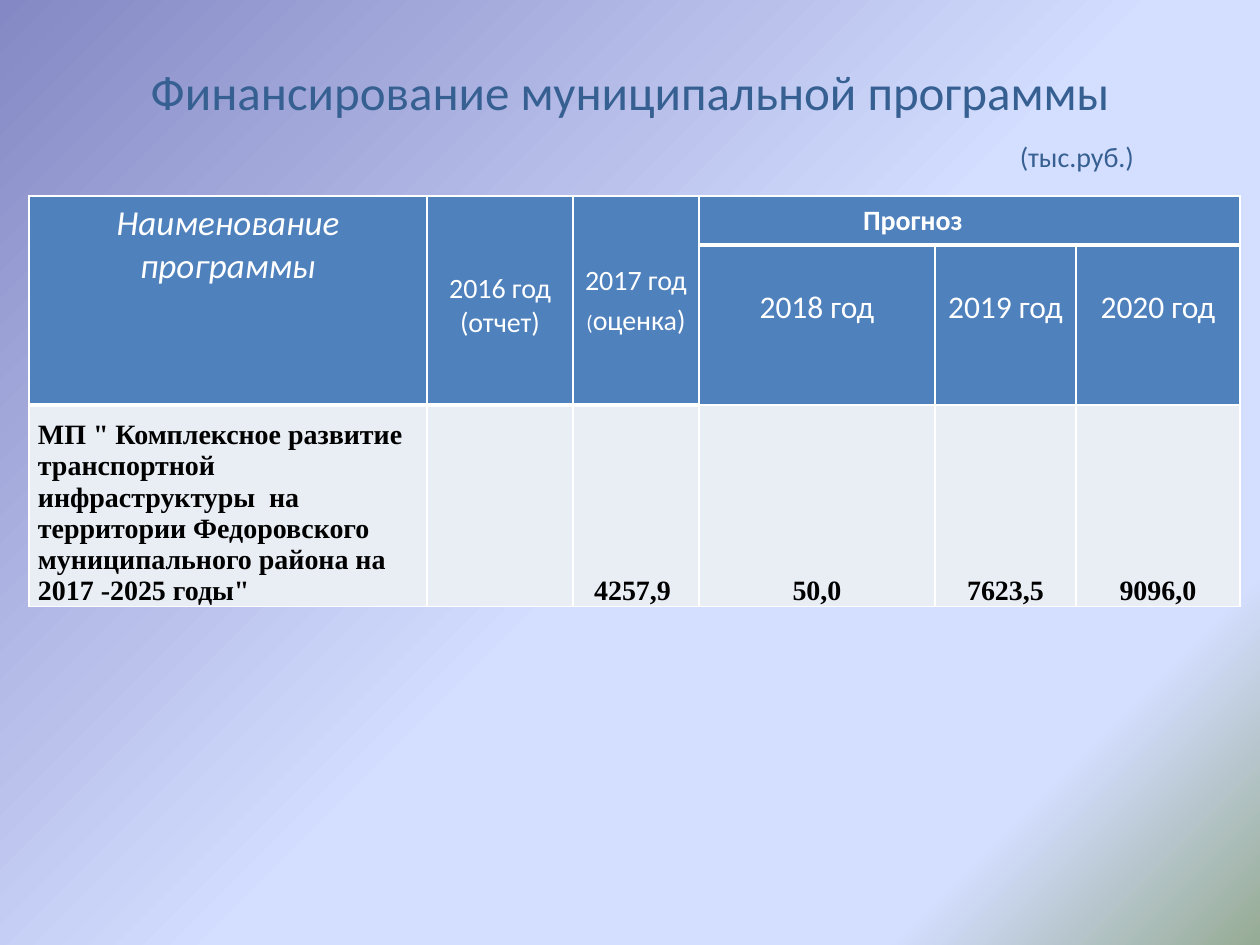
from pptx import Presentation, util as u
from pptx.dml.color import RGBColor
from pptx.enum import text
from pptx.oxml import parse_xml
from pptx.oxml.ns import nsdecls, qn

PX_PER_INCH = 126
HEADER, BODY, WHITE, BLACK, TITLE = "4F81BD", "E9EDF4", "FFFFFF", "000000", "376092"
COLUMNS = [398, 146, 126, 236, 141, 164]
ROWS = [49, 160, 187]
CENTER, LEFT, RIGHT = text.PP_ALIGN.CENTER, text.PP_ALIGN.LEFT, text.PP_ALIGN.RIGHT
TOP, MIDDLE, BOTTOM = (text.MSO_ANCHOR.TOP, text.MSO_ANCHOR.MIDDLE,
                       text.MSO_ANCHOR.BOTTOM)
HEAD_FONT = {"name": "Calibri", "size": 16, "color": WHITE}
BODY_FONT = {"name": "Times New Roman", "size": 16, "color": BLACK, "bold": True}


def px(length):
    return u.Emu(round(length * u.Inches(1) / PX_PER_INCH))


def rgb(value):
    return RGBColor.from_string(value)


def write(paragraph, wording, font, align=CENTER):
    paragraph.alignment = align
    run = paragraph.add_run()
    run.text = wording
    for key, value in font.items():
        if key == "color":
            run.font.color.rgb = rgb(value)
        else:
            setattr(run.font, key, u.Pt(value) if key == "size" else value)


def set_margins(holder, left, top, right, bottom):
    margins = {"left": left, "top": top, "right": right, "bottom": bottom}
    for side, length in margins.items():
        setattr(holder, f"margin_{side}", px(length))


def paint_background(slide, stops):
    fill = slide.background.fill
    fill.gradient()
    fill.gradient_angle = 315
    stop_list = next(slide.element.iter(qn("a:gsLst")))
    for old in list(stop_list):
        stop_list.remove(old)
    for percent, color in stops:
        stop_list.append(parse_xml(
            f'<a:gs {nsdecls("a")} pos="{percent * 1000}">'
            f'<a:srgbClr val="{color}"/></a:gs>'))


def add_title(slide):
    frame = slide.shapes.add_textbox(px(63), px(38), px(1134), px(158)).text_frame
    frame.word_wrap = True
    frame.vertical_anchor = MIDDLE
    set_margins(frame, 63, 6, 63, 6)
    font = {"name": "Calibri", "size": 28, "color": TITLE}
    write(frame.paragraphs[0], "Финансирование муниципальной программы", font)
    unit = frame.add_paragraph()
    unit.space_before = u.Pt(11)
    write(unit, "(тыс.руб.)", {**font, "size": 16}, RIGHT)


def fill_cell(cell, wording, font, anchor, margins, align=CENTER):
    cell.vertical_anchor = anchor
    set_margins(cell, *margins)
    write(cell.text_frame.paragraphs[0], wording, font, align)


def draw_borders(frame):
    """White 1 pt grid, with 3 pt lines under the header levels."""
    for index, tc in enumerate(frame.element.iter(qn("a:tc"))):
        row, column = divmod(index, len(COLUMNS))

        def level_width(edge):
            return 3 if edge == 1 or (edge == 2 and column < 3) else 1

        widths = {"L": 1, "R": 1, "T": level_width(row), "B": level_width(row + 1)}
        properties = tc.get_or_add_tcPr()
        for place, (side, width) in enumerate(widths.items()):
            properties.insert(place, parse_xml(
                f'<a:ln{side} {nsdecls("a")} w="{u.Pt(width)}"><a:solidFill>'
                f'<a:srgbClr val="{WHITE}"/></a:solidFill></a:ln{side}>'))


def fill_header(table):
    for column in range(3):
        table.cell(0, column).merge(table.cell(1, column))
    table.cell(0, 3).merge(table.cell(0, 5))

    fill_cell(table.cell(0, 0), "Наименование программы",
              {**HEAD_FONT, "size": 20, "italic": True}, TOP, (13, 6, 13, 6))
    fill_cell(table.cell(0, 1), "2016 год (отчет)", HEAD_FONT, MIDDLE, (1, 11, 1, 0))
    estimate = table.cell(0, 2)
    fill_cell(estimate, "2017 год", HEAD_FONT, MIDDLE, (1, 1, 1, 0))
    second_line = estimate.text_frame.add_paragraph()
    second_line.space_before = u.Pt(3.2)
    write(second_line, "(", {**HEAD_FONT, "size": 12})
    write(second_line, "оценка)", HEAD_FONT)
    fill_cell(table.cell(0, 3), "Прогноз", {**HEAD_FONT, "bold": True},
              MIDDLE, (164, 0, 13, 0), LEFT)
    for column, year in enumerate((2018, 2019, 2020), start=3):
        fill_cell(table.cell(1, column), f"{year} год", {**HEAD_FONT, "size": 18},
                  TOP, (9, 44, 9, 6))


def fill_programme(table):
    programme = ('МП " Комплексное развитие транспортной инфраструктуры  на территории '
                 'Федоровского муниципального района на 2017 -2025 годы"')
    margins = (9, 0, 9, 0)
    fill_cell(table.cell(2, 0), programme, BODY_FONT, BOTTOM, margins, LEFT)
    for column, amount in enumerate(("4257,9 ", "50,0", "7623,5", "9096,0"), start=2):
        fill_cell(table.cell(2, column), amount, BODY_FONT, BOTTOM, margins)


def add_budget_table(slide):
    frame = slide.shapes.add_table(len(ROWS), len(COLUMNS), px(29), px(196),
                                   px(sum(COLUMNS)), px(sum(ROWS)))
    table = frame.table
    table.horz_banding = False
    for column, width in zip(table.columns, COLUMNS):
        column.width = px(width)
    for index, height in enumerate(ROWS):
        table.rows[index].height = px(height)
        for cell in table.rows[index].cells:
            cell.fill.solid()
            cell.fill.fore_color.rgb = rgb(HEADER if index < 2 else BODY)
    fill_header(table)
    fill_programme(table)
    draw_borders(frame)


def main():
    deck = Presentation()
    deck.slide_width, deck.slide_height = px(1260), px(945)
    slide = deck.slides.add_slide(deck.slide_layouts[6])
    paint_background(slide, [(0, "8488C4"), (53, "D4DEFF"),
                             (83, "D4DEFF"), (100, "96AB94")])
    add_title(slide)
    add_budget_table(slide)
    deck.save("out.pptx")


if __name__ == "__main__":
    main()
